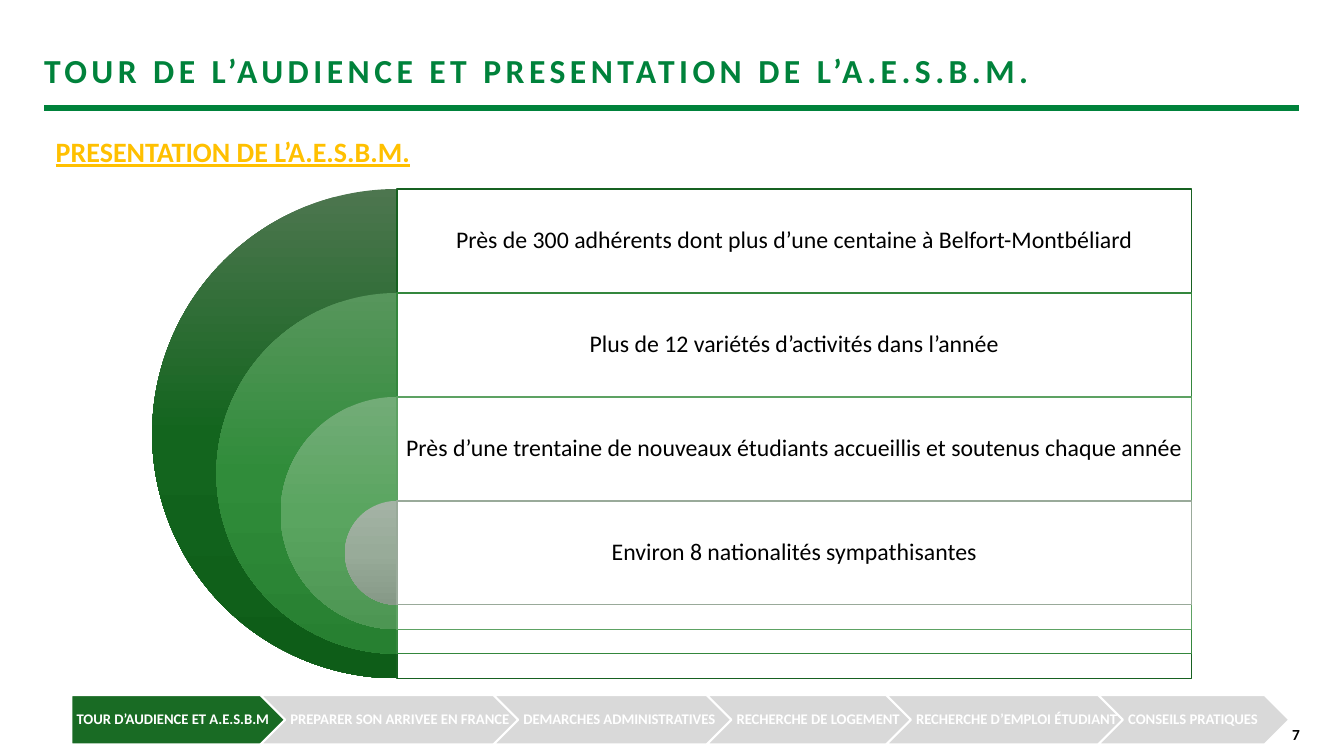
from pptx import Presentation
from pptx.dml.color import RGBColor
from pptx.enum.shapes import MSO_CONNECTOR, MSO_SHAPE
from pptx.enum.text import MSO_ANCHOR, PP_ALIGN
from pptx.oxml.ns import qn
from pptx.util import Pt
from copy import deepcopy
from lxml.etree import SubElement

PX = 9525
COLORS = {"green": "00823B", "gold": "FFC000", "active": "196B24",
          "idle": "D9D9D9", "white": "FFFFFF", "black": "000000"}
RINGS = [
    ("Près de 300 adhérents dont plus d’une centaine à Belfort-Montbéliard",
     ("4D764F", "13651E", "0E5D18"), "176121"),
    ("Plus de 12 variétés d’activités dans l’année",
     ("57965C", "308C3A", "278031"), "34873D"),
    ("Près d’une trentaine de nouveaux étudiants accueillis et soutenus chaque année",
     ("72AC77", "5AA560", "4D9653"), "5DA263"),
    ("Environ 8 nationalités sympathisantes",
     ("A4B3A5", "98AB99", "869987"), "99AA9A"),
]
STEPS = [
    ("TOUR D’AUDIENCE ET A.E.S.B.M", 234),
    ("PREPARER SON ARRIVEE EN FRANCE", 276),
    ("DEMARCHES ADMINISTRATIVES", 257),
    ("RECHERCHE DE LOGEMENT", 225),
    ("RECHERCHE D’EMPLOI ÉTUDIANT", 256),
    ("CONSEILS PRATIQUES", 182),
]


def rgb(color):
    return RGBColor.from_string(COLORS.get(color, color))


def emu(*lengths):
    return [round(n * PX) for n in lengths]


def place(sp, *box):
    sp.left, sp.top, sp.width, sp.height = emu(*box)


def write(sp, text, size, color="black", bold=False, underline=None, align=PP_ALIGN.LEFT,
          anchor=MSO_ANCHOR.TOP, insets=(10, 5, 10, 5), line=None, spacing=None):
    tf = sp.text_frame
    tf.word_wrap = True
    tf.vertical_anchor = anchor
    tf.margin_left, tf.margin_top, tf.margin_right, tf.margin_bottom = emu(*insets)
    p = tf.paragraphs[0]
    pPr = p._p.get_or_add_pPr()
    pPr.set("marL", "0")
    pPr.set("indent", "0")
    SubElement(pPr, qn("a:buNone"))
    p.alignment = align
    p.space_before = Pt(0)
    if line:
        p.line_spacing = line
    r = p.add_run()
    r.text = text
    r.font.name, r.font.size = "Calibri", Pt(size)
    r.font.bold, r.font.underline = bold, underline
    r.font.color.rgb = rgb(color)
    if spacing:
        r._r.get_or_add_rPr().set("spc", str(spacing))


def add_shape(s, kind, box, fill=None, line=None, width=1):
    sp = s.shapes.add_shape(kind, *emu(*box))
    sp.shadow.inherit = False
    if fill:
        sp.fill.solid()
        sp.fill.fore_color.rgb = rgb(fill)
    if line:
        sp.line.color.rgb = rgb(line)
        sp.line.width = Pt(width)
    else:
        sp.line.fill.background()
    return sp


def shade(sp, colors):
    sp.fill.gradient()
    sp.fill.gradient_angle = 270
    stops = sp._element.spPr.find(".//" + qn("a:gsLst"))
    stops.append(deepcopy(stops[-1]))
    for stop, position, color in zip(sp.fill.gradient_stops, (0, 0.5, 1), colors):
        stop.position = position
        stop.color.rgb = rgb(color)


def header(s, x, y, w, h):
    title, body = s.placeholders
    place(title, x, y, w, 43)
    write(title, "TOUR DE L’AUDIENCE ET PRESENTATION DE L’A.E.S.B.M.", 24, "green", bold=True,
          anchor=MSO_ANCHOR.BOTTOM, insets=(0, 5, 10, 0), spacing=320)
    rule = s.shapes.add_connector(MSO_CONNECTOR.STRAIGHT, *emu(x, y + 60, x + w, y + 60))
    rule.line.color.rgb = rgb("green")
    rule.line.width = Pt(4.5)
    SubElement(rule._element.spPr, qn("a:effectLst"))
    place(body, x + 1, y + h - 42, 995, 42)
    write(body, "PRESENTATION DE L’A.E.S.B.M.", 20, "gold", bold=True, underline=True)


def rings(s, x, y, w, h):
    row = 99
    center = x + h / 2
    shrink = (h - row) / (len(RINGS) - 1)
    for i, (text, colors, line) in enumerate(RINGS):
        size = h - i * shrink
        top = y + i * row
        pie = add_shape(s, MSO_SHAPE.PIE, (center - size / 2, top, size, size))
        pie.adjustments[0], pie.adjustments[1] = 54, 162
        shade(pie, colors)
        panel = add_shape(s, MSO_SHAPE.RECTANGLE, (center, top, x + w - center, size),
                          "white", line)
        solid = panel._element.spPr.find(qn("a:solidFill"))
        SubElement(solid[0], qn("a:alpha")).set("val", "90000")
        write(panel, text, 17, align=PP_ALIGN.CENTER, anchor=MSO_ANCHOR.MIDDLE,
              insets=(6, 7, 6, size - row + 7), line=0.9)


def steps(s, x, y, h):
    overlap = 54
    for i, (text, width) in enumerate(STEPS):
        kind, fill = (MSO_SHAPE.CHEVRON, "idle") if i else (MSO_SHAPE.PENTAGON, "active")
        sp = add_shape(s, kind, (x, y, width, h), fill, "white", 1.5)
        write(sp, text, 10.5, "white", bold=True, anchor=MSO_ANCHOR.MIDDLE,
              insets=(5, 3, 2, 3), line=0.9)
        x += width - overlap


def page_number(s, x, y, w, h):
    write(s.shapes.add_textbox(*emu(x, y, w, h)), "7", 11, bold=True, align=PP_ALIGN.RIGHT)


def main():
    prs = Presentation()
    prs.slide_width, prs.slide_height = emu(1280, 720)
    s = prs.slides.add_slide(prs.slide_layouts[1])
    header(s, 42, 43, 1195, 122)
    rings(s, 145, 180, 990, 466)
    steps(s, 68, 662, 47)
    page_number(s, 1199, 686, 49, 16)
    prs.save("out.pptx")


if __name__ == "__main__":
    main()
